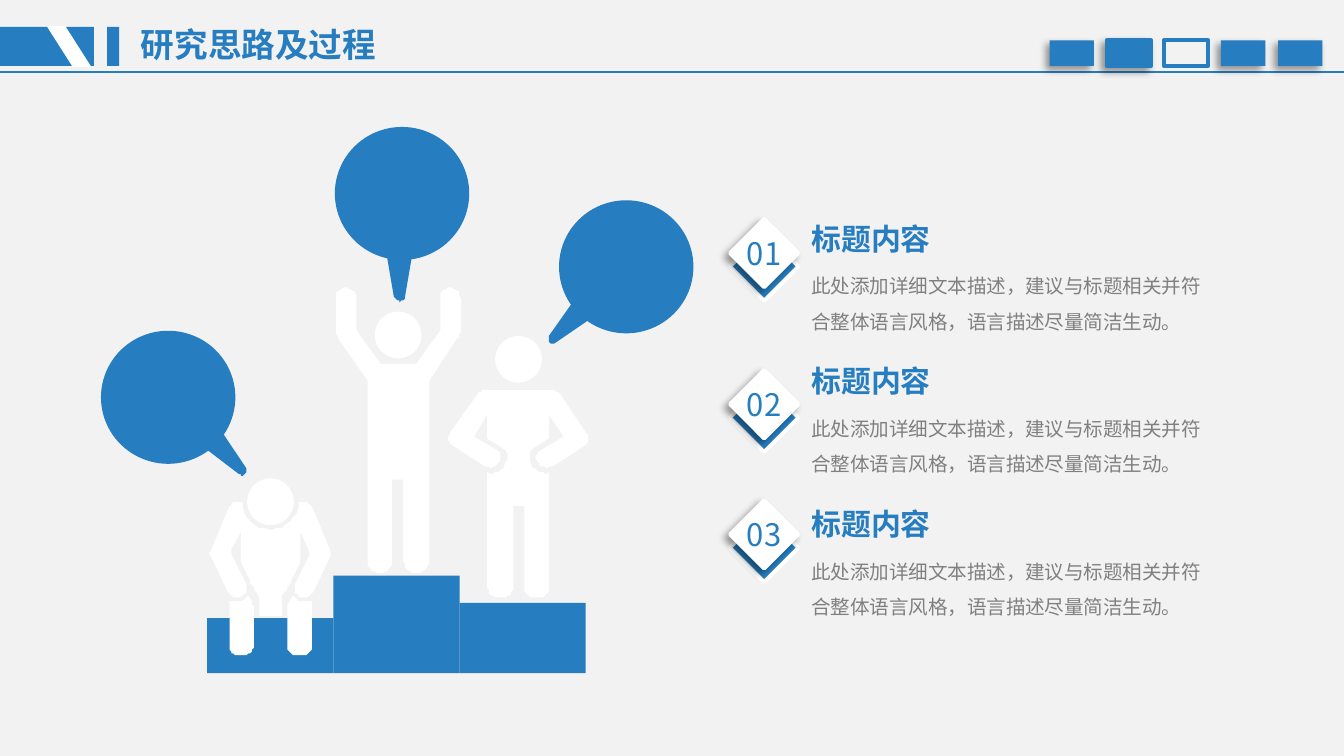
from lxml import etree
from pptx import Presentation
from pptx.dml.color import RGBColor
from pptx.enum import shapes, text
from pptx.oxml.ns import qn
from pptx.util import Pt

THEME = {
    "blue": "267DBF", "white": "FFFFFF", "page": "F2F2F2", "grey": "808080",
    "black": "000000", "font": "Noto Sans CJK SC",
    "heading": 18, "number": 16.6, "title": 16, "body": 10.5,
}

# Content
HEADING = "研究思路及过程"
DETAIL = "此处添加详细文本描述，建议与标题相关并符合整体语言风格，语言描述尽量简洁生动。"
POINTS = [  # number, title, detail, top of the diamond
    ("01", "标题内容", DETAIL, 117.2),
    ("02", "标题内容", DETAIL, 198.2),
    ("03", "标题内容", DETAIL, 267.9),
]
NAV = ["plain", "visited", "current", "plain", "plain"]
PODIUM_TOPS = [331.2, 308.4, 323]
BUBBLES = [  # left, top, tail outline
    (54.1, 177.2, [(94, 228), (108, 215), (132.8, 252.2, 2), (130, 255.4, 2)]),
    (179.4, 68, [(204.5, 117.5), (224, 117.5), (216.9, 161.5, 2.5), (211.9, 161.5, 2.5)]),
    (299.5, 107.3, [(331.5, 160), (317.5, 145.5), (293, 181.5, 2), (295.5, 185, 2)]),
]
# Each person is symmetric: outlines hold (distance left of axis, y, corner radius)
PEOPLE = [
    {"axis": 144.9, "head": 256.3, "body": [
        (15.1, 283.7, 15), (15.1, 268.6), (20.4, 268.6, 3), (33, 296.6, 2),
        (20.4, 321.8, 5), (11, 317.5, 5), (21.1, 296.6), (20.4, 293.8),
        (15.9, 285.1), (15.9, 301), (10.3, 313.2, 2), (6, 319, 3), (6, 329.8)],
     "shin": [(22.3, 321.5), (15.5, 322.8, 2), (11.7, 319), (9, 324, 2),
              (9, 351.4, 5.8), (22.3, 351.4, 5.8)]},
    {"axis": 213.3, "head": 167, "body": [
        (9.7, 195.1), (22.5, 177.1), (22.5, 154.1, 5.4), (33.3, 154.1, 5.4),
        (33.3, 179.5, 2), (16.4, 203.6), (16.4, 306.9, 5.8), (3.2, 306.9, 5.8),
        (3.2, 257)]},
    {"axis": 277.8, "head": 180, "body": [
        (20.5, 208.8, 3), (39.5, 236.2, 5), (13.9, 252.4, 5), (7.4, 243.7, 5),
        (24.3, 234), (16.4, 222.5), (16.4, 234.7), (11.4, 238.3), (4.2, 242.6, 5),
        (9.9, 254.2, 5), (16.4, 253.4), (16.4, 320.4, 5.8), (3, 320.4, 5.8),
        (3, 270.7)]},
]

prs = Presentation()
prs.slide_width, prs.slide_height = Pt(720), Pt(405)
slide = prs.slides.add_slide(prs.slide_layouts[6])
canvas = slide.shapes
KIND = shapes.MSO_SHAPE


def colour(name):
    return RGBColor.from_string(THEME[name])


def paint(shape, fill, line=None, shadow=False):
    shape.shadow.inherit = False
    if fill:
        shape.fill.solid()
        shape.fill.fore_color.rgb = colour(fill)
    else:
        shape.fill.background()
    if line:
        shape.line.color.rgb = colour(line)
        shape.line.width = Pt(2)
    else:
        shape.line.fill.background()
    if shadow:
        effects = shape._element.spPr.find(qn("a:effectLst"))
        outer = etree.SubElement(effects, qn("a:outerShdw"), blurRad=str(Pt(4)),
                                 dist=str(Pt(3)), dir="8100000", algn="tr", rotWithShape="0")
        tint = etree.SubElement(outer, qn("a:srgbClr"), val=THEME["black"])
        etree.SubElement(tint, qn("a:alpha"), val="40000")
    return shape


def preset(kind, left, top, width, height, fill, line=None, shadow=False):
    shape = canvas.add_shape(kind, Pt(left), Pt(top), Pt(width), Pt(height))
    return paint(shape, fill, line, shadow)


def rounded(corners, steps=8):
    """Replace every corner that has a radius by a sampled curve."""
    outline = []
    for i, (x, y, *radius) in enumerate(corners):
        if not radius:
            outline.append((x, y))
            continue
        ends = []
        for nx, ny, *_ in (corners[i - 1], corners[(i + 1) % len(corners)]):
            length = ((nx - x) ** 2 + (ny - y) ** 2) ** 0.5
            share = min(radius[0] / length, 1)
            ends.append((x + (nx - x) * share, y + (ny - y) * share))
        for t in (step / steps for step in range(steps + 1)):
            a, b, c, d = (1 - t) ** 3, 3 * t * (1 - t) ** 2, 3 * t * t * (1 - t), t ** 3
            outline.append(tuple(
                (a + 0.45 * b) * start + 0.55 * (b + c) * corner + (0.45 * c + d) * end
                for start, corner, end in zip(ends[0], (x, y), ends[1])))
    return outline


def freeform(corners, fill):
    outline = rounded(corners)
    builder = canvas.build_freeform(*outline[0], scale=Pt(1))
    builder.add_line_segments(outline[1:], close=True)
    return paint(builder.convert_to_shape(), fill)


def write(shape, words, size, ink, bold=False, spacing=None, wrap=True):
    frame = shape.text_frame
    frame.word_wrap = wrap
    paragraph = frame.paragraphs[0]
    paragraph.text = words
    if spacing:
        paragraph.line_spacing = spacing
    font = paragraph.font
    font.size, font.bold, font.name = Pt(THEME[size]), bold, THEME["font"]
    font.color.rgb = colour(ink)
    etree.SubElement(font._element, qn("a:ea"), typeface=THEME["font"])
    return frame


def label(left, top, width, height, *args, **options):
    write(canvas.add_textbox(Pt(left), Pt(top), Pt(width), Pt(height)), *args, **options)


# Header
slide.background.fill.solid()
slide.background.fill.fore_color.rgb = colour("page")
preset(KIND.RECTANGLE, 0, 14.4, 50.4, 20.9, "blue")
freeform([(24.6, 14.3), (34.8, 14.3), (48.7, 35.5), (38.6, 35.5)], "white")
preset(KIND.RECTANGLE, 57.4, 14.4, 6.4, 20.9, "blue")
label(68.4, 9.4, 180.7, 28.8, HEADING, "heading", "blue", bold=True)
rule = canvas.add_connector(shapes.MSO_CONNECTOR.STRAIGHT, Pt(0), Pt(38.6), Pt(720), Pt(38.6))
rule.line.color.rgb, rule.line.width = colour("blue"), Pt(1)
etree.SubElement(rule._element.spPr, qn("a:effectLst"))
for i, state in enumerate(NAV):
    preset(KIND.RECTANGLE, 562.3 + 30.6 * i, 21.6, 23.8, 13.7,
           fill=None if state == "current" else "blue",
           line=None if state == "plain" else "blue", shadow=state != "current")

# Podium, people and speech bubbles
for i, top in enumerate(PODIUM_TOPS):
    preset(KIND.RECTANGLE, 111 + 67.6 * i, top, 67.6, 360.7 - top, "blue")
for person in PEOPLE:
    axis = person["axis"]
    left, right = ([(axis + side * dx, y, *r) for dx, y, *r in person["body"]]
                   for side in (-1, 1))
    if "shin" in person:
        for side in (-1, 1):
            freeform([(axis + side * dx, y, *r) for dx, y, *r in person["shin"]], "white")
    freeform(left + right[::-1], "white")
    preset(KIND.OVAL, axis - 12.5, person["head"], 25, 25, "white")
for left, top, tail in BUBBLES:
    preset(KIND.OVAL, left, top, 72, 71.3, "blue")
    freeform(tail, "blue")

# Numbered points
for i, (number, title, detail, top) in enumerate(POINTS):
    preset(KIND.DIAMOND, 391, top + 7.2, 36.7, 36.7, "blue", "white")
    badge = preset(KIND.DIAMOND, 391, top, 36.7, 36.7, "white", "white", shadow=True)
    frame = write(badge, number, "number", "blue", wrap=False)
    frame.margin_left = frame.margin_right = frame.margin_top = frame.margin_bottom = 0
    frame.vertical_anchor = text.MSO_ANCHOR.MIDDLE
    frame.paragraphs[0].alignment = text.PP_ALIGN.CENTER
    title_top = 114.5 + 76.4 * i
    label(427.7, title_top, 85.7, 26.6, title, "title", "blue", bold=True)
    label(427.7, title_top + 22.6, 226.1, 43.2, detail, "body", "grey", spacing=1.5)

prs.save("out.pptx")
